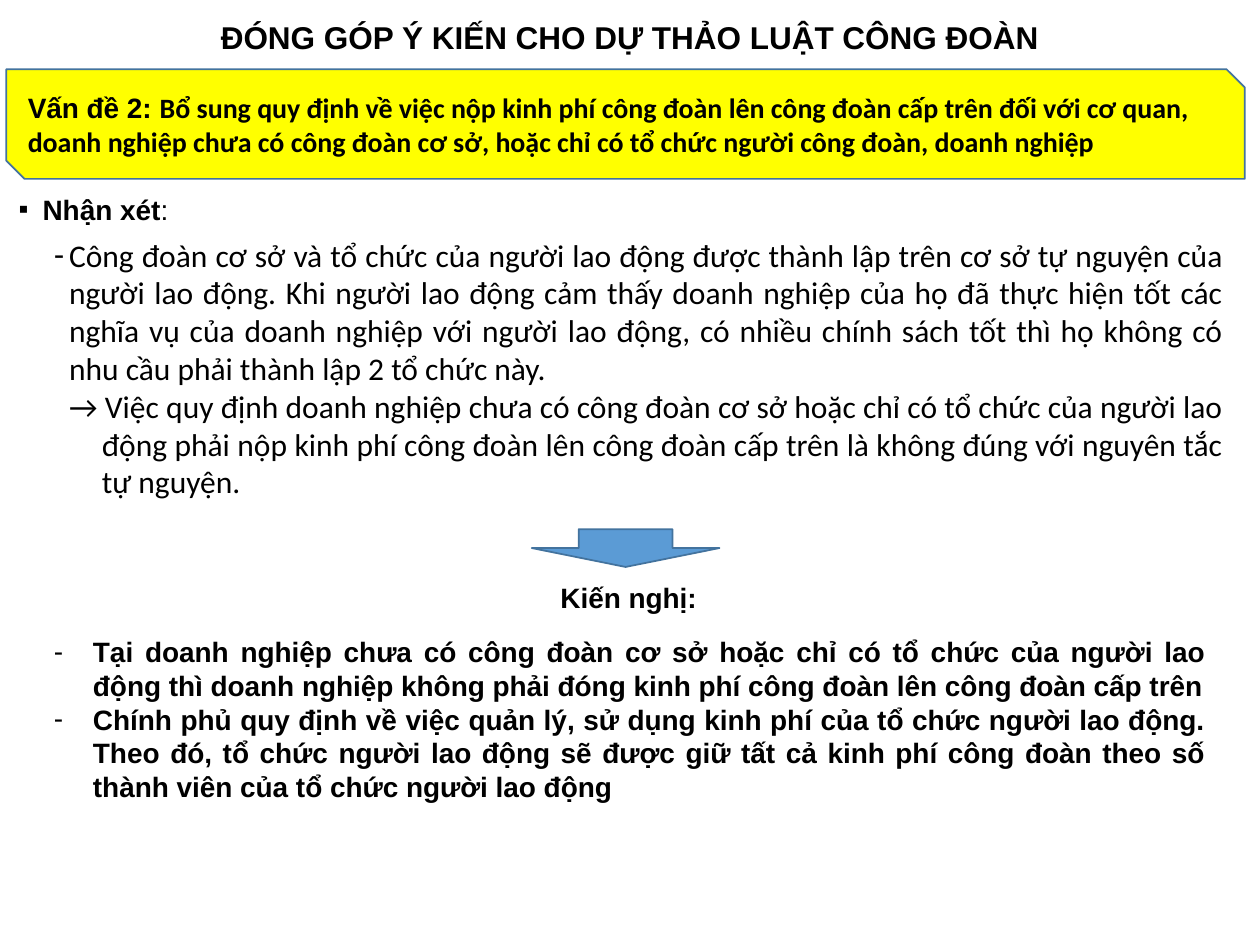
from lxml import etree
from pptx import Presentation
from pptx.dml.color import RGBColor
from pptx.enum import shapes, text
from pptx.oxml import ns
from pptx.util import Inches, Pt

COLORS = {"text": "000000", "banner": "FFFF00", "arrow": "5B9BD5", "outline": "43739E"}
JUSTIFY = text.PP_ALIGN.JUSTIFY
LEFT = text.PP_ALIGN.LEFT


def color(name):
    return RGBColor.from_string(COLORS[name])


def write_paragraph(paragraph, pieces, size=16, align=LEFT):
    """Fill a paragraph with (words, font name, bold) pieces."""
    paragraph.alignment = align
    for words, font_name, bold in pieces:
        run = paragraph.add_run()
        run.text = words
        run.font.name = font_name
        run.font.size = Pt(size)
        run.font.bold = bold
        run.font.color.rgb = color("text")


def indent(paragraph, left, first, bullet=None):
    properties = paragraph._p.get_or_add_pPr()
    properties.set("marL", str(Inches(left)))
    properties.set("indent", str(Inches(first)))
    if bullet:
        etree.SubElement(properties, ns.qn("a:buFont")).set("typeface", "Arial")
        etree.SubElement(properties, ns.qn("a:buChar")).set("char", bullet)


def add_text_box(slide, left, top, width, height, wrap=True):
    box = slide.shapes.add_textbox(Inches(left), Inches(top), Inches(width), Inches(height))
    box.text_frame.word_wrap = wrap
    box.text_frame.auto_size = text.MSO_AUTO_SIZE.SHAPE_TO_FIT_TEXT
    return box.text_frame


def add_outlined_shape(slide, kind, left, top, width, height, fill):
    shape = slide.shapes.add_shape(
        kind, Inches(left), Inches(top), Inches(width), Inches(height))
    shape.shadow.inherit = False
    shape.fill.solid()
    shape.fill.fore_color.rgb = color(fill)
    shape.line.color.rgb = color("outline")
    shape.line.width = Pt(1)
    return shape


def add_heading(slide, words, left, top, width, height, size, align=LEFT):
    frame = add_text_box(slide, left, top, width, height, wrap=False)
    write_paragraph(frame.paragraphs[0], [(words, "Arial", True)], size, align)


def add_banner(slide):
    banner = add_outlined_shape(
        slide, shapes.MSO_SHAPE.SNIP_2_DIAG_RECTANGLE, 0.05, 0.55, 9.83, 0.87, "banner")
    banner.text_frame.word_wrap = True
    banner.text_frame.vertical_anchor = text.MSO_ANCHOR.MIDDLE
    write_paragraph(banner.text_frame.paragraphs[0], [
        ("Vấn đề 2: ", "Arial", True),
        ("Bổ sung quy định về việc nộp kinh phí công đoàn lên công đoàn cấp trên đối với "
         "cơ quan, doanh nghiệp chưa có công đoàn cơ sở, hoặc chỉ có tổ chức người công "
         "đoàn, doanh nghiệp", "Calibri", True)])


def add_comments(slide):
    label = add_text_box(slide, 0.05, 1.48, 9.7, 0.37).paragraphs[0]
    write_paragraph(label, [("Nhận xét", "Arial", True), (":", "Arial", False)])
    indent(label, 0.19, -0.19, "▪")

    frame = add_text_box(slide, 0.33, 1.82, 9.48, 2.22)
    comment, conclusion = frame.paragraphs[0], frame.add_paragraph()
    write_paragraph(comment, [(
        "Công đoàn cơ sở và tổ chức của người lao động được thành lập trên cơ sở tự nguyện "
        "của người lao động. Khi người lao động cảm thấy doanh nghiệp của họ đã thực hiện "
        "tốt các nghĩa vụ của doanh nghiệp với người lao động, có nhiều chính sách tốt thì "
        "họ không có nhu cầu phải thành lập 2 tổ chức này.", "Calibri", False)], 18, JUSTIFY)
    indent(comment, 0.12, -0.12, "-")
    write_paragraph(conclusion, [(
        "→ Việc quy định doanh nghiệp chưa có công đoàn cơ sở hoặc chỉ có tổ chức của người "
        "lao động phải nộp kinh phí công đoàn lên công đoàn cấp trên là không đúng với "
        "nguyên tắc tự nguyện.", "Calibri", False)], 18, JUSTIFY)
    indent(conclusion, 0.38, -0.26)


def add_proposals(slide):
    proposals = [
        "Tại doanh nghiệp chưa có công đoàn cơ sở hoặc chỉ có tổ chức của người lao động thì "
        "doanh nghiệp không phải đóng kinh phí công đoàn lên công đoàn cấp trên",
        "Chính phủ quy định về việc quản lý, sử dụng kinh phí của tổ chức người lao động. "
        "Theo đó, tổ chức người lao động sẽ được giữ tất cả kinh phí công đoàn theo số thành "
        "viên của tổ chức người lao động",
    ]
    frame = add_text_box(slide, 0.33, 4.99, 9.34, 1.72)
    for index, words in enumerate(proposals):
        paragraph = frame.add_paragraph() if index else frame.paragraphs[0]
        write_paragraph(paragraph, [(words, "Arial", True)], align=JUSTIFY)
        indent(paragraph, 0.31, -0.31, "-")


def main():
    presentation = Presentation()
    presentation.slide_width = Inches(10)
    presentation.slide_height = Inches(7.5)
    slide = presentation.slides.add_slide(presentation.slide_layouts[6])

    add_heading(slide, "ĐÓNG GÓP Ý KIẾN CHO DỰ THẢO LUẬT CÔNG ĐOÀN",
                1.62, 0.09, 6.76, 0.4, 18, text.PP_ALIGN.CENTER)
    add_banner(slide)
    add_comments(slide)
    add_outlined_shape(slide, shapes.MSO_SHAPE.DOWN_ARROW, 4.22, 4.2, 1.49, 0.3, "arrow")
    add_heading(slide, "Kiến nghị:", 4.35, 4.56, 1.3, 0.37, 16)
    add_proposals(slide)
    presentation.save("out.pptx")


if __name__ == "__main__":
    main()
